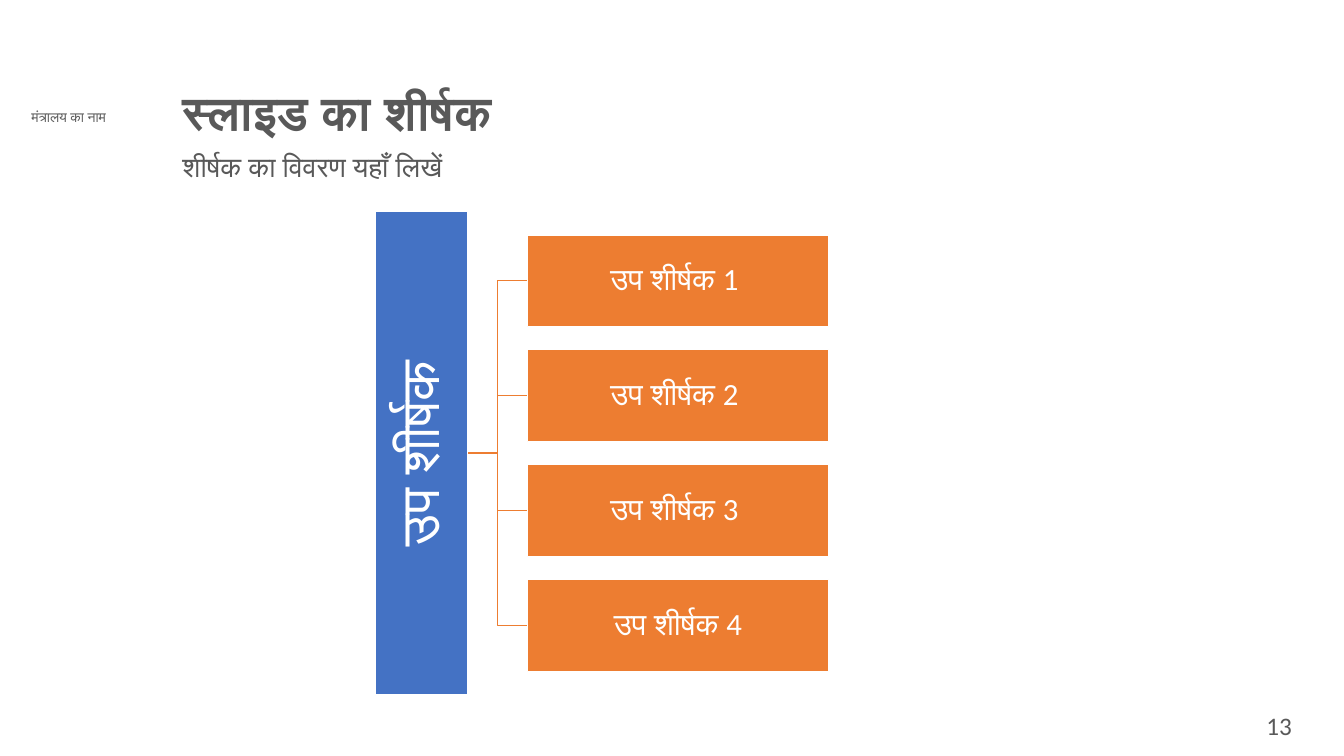
from pptx import Presentation
from pptx.dml.color import RGBColor
from pptx.enum.shapes import MSO_SHAPE
from pptx.enum.text import MSO_ANCHOR, MSO_AUTO_SIZE, PP_ALIGN
from pptx.util import Pt

MINISTRY = "मंत्रालय का नाम"
TITLE = "स्लाइड का शीर्षक"
DESCRIPTION = "शीर्षक का विवरण यहाँ लिखें"
ROOT = "उप शीर्षक"
BRANCHES = ["उप शीर्षक 1 ", "उप शीर्षक 2 ", "उप शीर्षक 3 ", "उप शीर्षक 4"]
PAGE_NUMBER = "13"

GREY = RGBColor(0x59, 0x59, 0x59)
BLUE = RGBColor(0x44, 0x72, 0xC4)
ORANGE = RGBColor(0xED, 0x7D, 0x31)
WHITE = RGBColor(0xFF, 0xFF, 0xFF)

LEFT, CENTER = PP_ALIGN.LEFT, PP_ALIGN.CENTER
TOP, MIDDLE = MSO_ANCHOR.TOP, MSO_ANCHOR.MIDDLE
NO_AUTOFIT = MSO_AUTO_SIZE.NONE
RECTANGLE = MSO_SHAPE.RECTANGLE

HEADING_LEFT, HEADING_WIDTH = 123.12, 692
BAR_LENGTH, BOX_HEIGHT = 345.6, 65.6
BAR_CENTER_X, TREE_CENTER_Y = 301, 323.7
BOX_LEFT, BOX_WIDTH, BOX_PITCH = 376.6, 215.2, 82.1
LINK_LEFT, LINK_MIDDLE = 333.8, 355.2


def write(shape, text, size, color=GREY, font="Calibri", bold=False,
          align=LEFT, anchor=TOP, spacing=0.9, inset=None):
    frame = shape.text_frame
    frame.word_wrap = True
    frame.auto_size = NO_AUTOFIT
    frame.vertical_anchor = anchor
    if inset is not None:
        frame.margin_left = frame.margin_right = Pt(inset)
        frame.margin_top = frame.margin_bottom = Pt(inset)
    frame.text = text
    paragraph = frame.paragraphs[0]
    paragraph.alignment = align
    paragraph.line_spacing = spacing
    paragraph.space_before = Pt(0)
    run_font = paragraph.runs[0].font
    run_font.name = font
    run_font.size = Pt(size)
    run_font.bold = bold
    run_font.color.rgb = color


def place(shape, left, top, width, height):
    shape.left, shape.top = Pt(left), Pt(top)
    shape.width, shape.height = Pt(width), Pt(height)


def add_box(slide, left, top, width, fill):
    box = slide.shapes.add_shape(RECTANGLE, Pt(left), Pt(top), Pt(width), Pt(BOX_HEIGHT))
    box.shadow.inherit = False
    box.fill.solid()
    box.fill.fore_color.rgb = fill
    box.line.color.rgb = WHITE
    box.line.width = Pt(1)
    return box


def add_link(slide, branch_y):
    builder = slide.shapes.build_freeform(Pt(LINK_LEFT), Pt(TREE_CENTER_Y))
    corners = [(LINK_MIDDLE, TREE_CENTER_Y), (LINK_MIDDLE, branch_y), (BOX_LEFT, branch_y)]
    builder.add_line_segments([(Pt(x), Pt(y)) for x, y in corners], close=False)
    link = builder.convert_to_shape()
    link.shadow.inherit = False
    link.fill.background()
    link.line.color.rgb = ORANGE
    link.line.width = Pt(1)


def add_tree(slide):
    middle_index = (len(BRANCHES) - 1) / 2
    centers = [TREE_CENTER_Y + (index - middle_index) * BOX_PITCH
               for index in range(len(BRANCHES))]
    for center in centers:
        add_link(slide, center)
    bar = add_box(slide, BAR_CENTER_X - BAR_LENGTH / 2,
                  TREE_CENTER_Y - BOX_HEIGHT / 2, BAR_LENGTH, BLUE)
    bar.rotation = 270
    write(bar, ROOT, 39, color=WHITE, align=CENTER, anchor=MIDDLE, inset=2)
    for text, center in zip(BRANCHES, centers):
        box = add_box(slide, BOX_LEFT, center - BOX_HEIGHT / 2, BOX_WIDTH, ORANGE)
        write(box, text, 22, color=WHITE, align=CENTER, anchor=MIDDLE, inset=1.5)


def main():
    presentation = Presentation()
    presentation.slide_width, presentation.slide_height = Pt(960), Pt(540)
    slide = presentation.slides.add_slide(presentation.slide_layouts[0])

    title, description = slide.placeholders
    place(title, HEADING_LEFT, 60.5, HEADING_WIDTH, 39.6)
    write(title, TITLE, 34, bold=True)
    place(description, HEADING_LEFT, 105.8, HEADING_WIDTH, 45.4)
    write(description, DESCRIPTION, 20)

    ministry = slide.shapes.add_textbox(Pt(2.2), Pt(74.2), Pt(93.6), Pt(19.4))
    write(ministry, MINISTRY, 10, font="Lato", align=CENTER, spacing=1.0)

    add_tree(slide)

    number = slide.shapes.add_textbox(Pt(871.2), Pt(504), Pt(85), Pt(32.4))
    write(number, PAGE_NUMBER, 18, align=CENTER, spacing=1.0)

    presentation.save("out.pptx")


if __name__ == "__main__":
    main()
